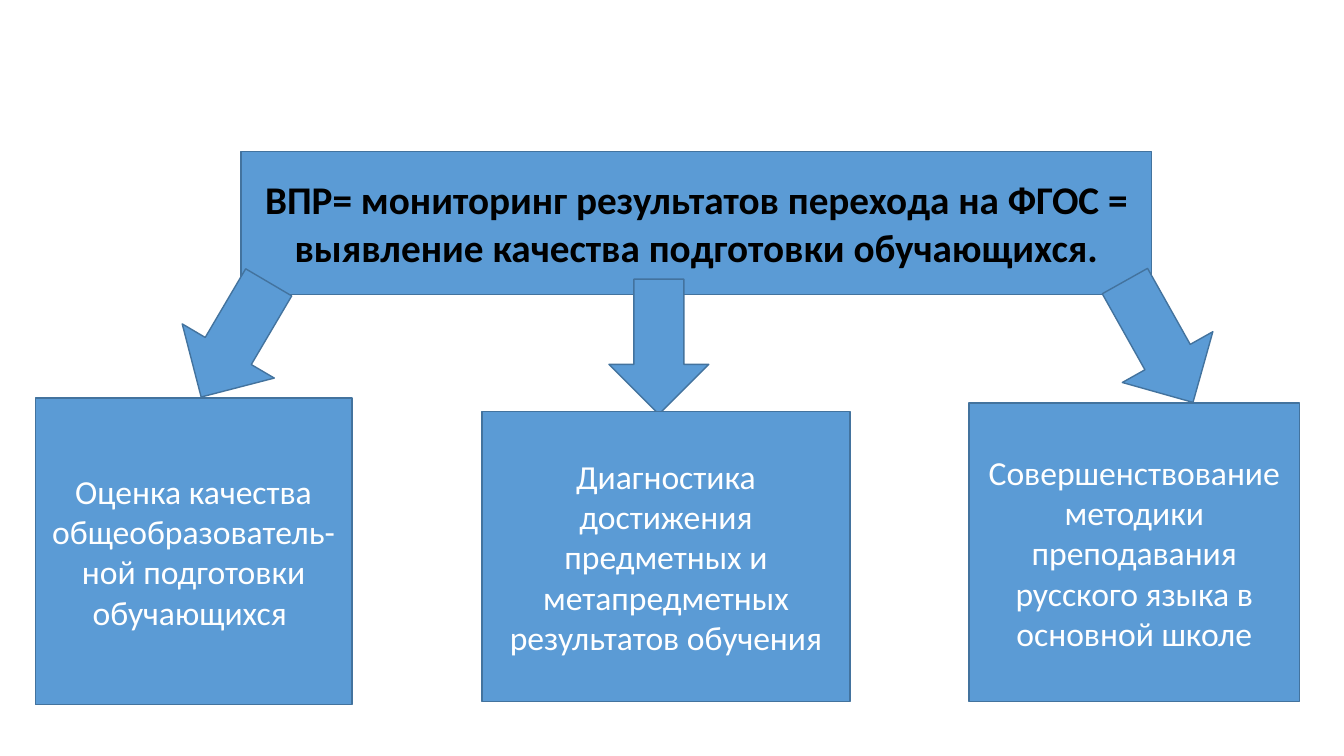
from pptx import Presentation
from pptx.dml.color import RGBColor as RGB
from pptx.enum.shapes import MSO_SHAPE as Kind
from pptx.enum.text import MSO_ANCHOR as Anchor, PP_ALIGN as Align
from pptx.util import Inches, Pt

COLORS = {"fill": "5B9BD5", "line": "43739E", "dark": "000000", "light": "FFFFFF"}
FONT = "Calibri"

# Places are left, top, width, height in inches
TITLE = ("ВПР= мониторинг результатов перехода на ФГОС = "
         "выявление качества подготовки обучающихся.", (2.39, 1.5, 9.03, 1.42))
# Goal text, box place, arrow place, arrow turn in degrees
GOALS = [
    ("Оценка качества общеобразователь-ной подготовки обучающихся ",
     (0.35, 3.95, 3.14, 3.04), (1.8, 2.71, 1.06, 1.32), 30.5),
    ("Диагностика достижения предметных и метапредметных результатов обучения",
     (4.78, 4.08, 3.65, 2.88), (6.04, 2.77, 0.99, 1.34), 0),
    ("Совершенствование методики преподавания русского языка в основной школе",
     (9.61, 4, 3.28, 2.96), (10.98, 2.7, 1.03, 1.38), 330.7),
]


def color(name):
    return RGB.from_string(COLORS[name])


def add_part(slide, kind, place, turn=0):
    part = slide.shapes.add_shape(kind, *map(Inches, place))
    part.rotation = turn
    part.shadow.inherit = False
    part.fill.solid()
    part.fill.fore_color.rgb = color("fill")
    part.line.color.rgb = color("line")
    part.line.width = Pt(1)
    return part


def add_box(slide, text, place, size, ink, bold=False):
    frame = add_part(slide, Kind.RECTANGLE, place).text_frame
    frame.text = text
    frame.word_wrap = True
    frame.vertical_anchor = Anchor.MIDDLE
    line = frame.paragraphs[0]
    line.alignment = Align.CENTER
    font = line.runs[0].font
    font.name = FONT
    font.size = Pt(size)
    font.bold = bold
    font.color.rgb = color(ink)


def main():
    deck = Presentation()
    deck.slide_width, deck.slide_height = Inches(13.33), Inches(7.5)
    slide = deck.slides.add_slide(deck.slide_layouts[6])
    add_box(slide, *TITLE, 28, "dark", bold=True)
    for text, place, arrow, turn in GOALS:
        add_part(slide, Kind.DOWN_ARROW, arrow, turn)
        add_box(slide, text, place, 24, "light")
    deck.save("out.pptx")


if __name__ == "__main__":
    main()
